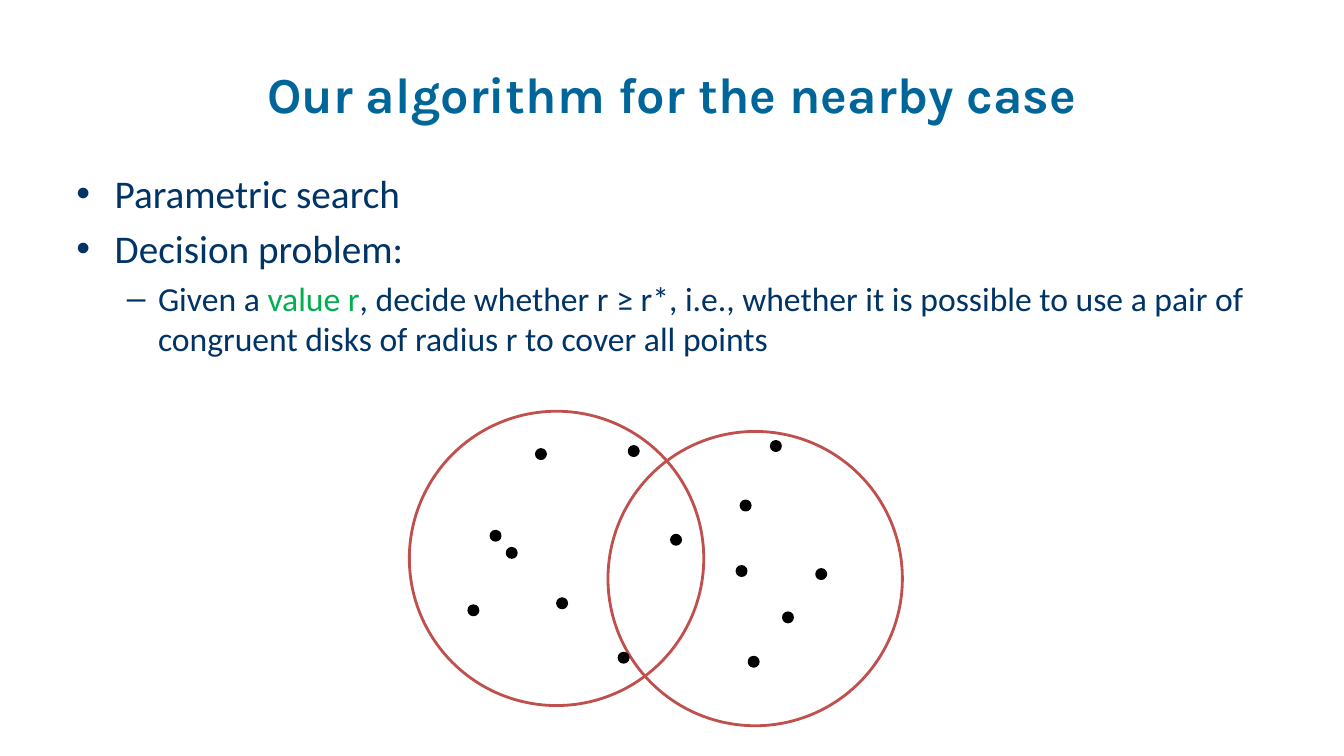
"""Build a slide on the nearby case of a two-disk cover problem."""
from typing import NamedTuple

from lxml import etree
from pptx import Presentation
from pptx import util as u
from pptx.dml import color as clr
from pptx.enum import shapes, text
from pptx.oxml import ns

NAVY, GREEN, RED, BLACK = "003366", "00B050", "C0504D", "000000"
DISK, DOT = 2.92, 0.09


class Spot(NamedTuple):
    left: float
    top: float


class Item(NamedTuple):
    words: tuple[tuple[str, str], ...]
    size: int
    level: int
    mark: str
    left: float
    hang: float


DISKS = [Spot(6.03, 4.28), Spot(4.06, 4.08)]
DOTS = [
    Spot(4.87, 5.27), Spot(5.03, 5.44), Spot(7.65, 4.38), Spot(7.43, 6.52),
    Spot(5.53, 5.94), Spot(6.24, 4.43), Spot(4.65, 6.01), Spot(6.14, 6.48),
    Spot(7.77, 6.08), Spot(5.32, 4.46), Spot(6.66, 5.31), Spot(8.1, 5.65),
    Spot(7.31, 5.62), Spot(7.35, 4.97),
]
ITEMS = [
    Item((("Parametric search", NAVY),), 28, 0, "•", 0.38, 0.38),
    Item((("Decision problem:", NAVY),), 28, 0, "•", 0.38, 0.38),
    Item((("Given a ", NAVY), ("value r", GREEN),
          (", decide whether r ≥ r*, i.e., whether it is possible to use a pair of "
           "congruent disks of radius r to cover all points", NAVY)),
         24, 1, "–", 0.81, 0.31),
]


def paint(code: str) -> clr.RGBColor:
    return clr.RGBColor.from_string(code)


def style(run, face: str, size: int, tint: str) -> None:
    run.font.name = face
    run.font.size = u.Pt(size)
    run.font.color.rgb = paint(tint)


def place(shape, left: float, top: float, width: float, height: float) -> None:
    shape.left, shape.top = u.Inches(left), u.Inches(top)
    shape.width, shape.height = u.Inches(width), u.Inches(height)


def add_title(slide) -> None:
    title = slide.shapes.title
    place(title, 0.67, 0.3, 12, 1.25)
    frame = title.text_frame
    frame.text = "Our algorithm for the nearby case"
    frame.auto_size = text.MSO_AUTO_SIZE.NONE
    frame.vertical_anchor = text.MSO_ANCHOR.MIDDLE
    para = frame.paragraphs[0]
    para.alignment = text.PP_ALIGN.CENTER
    run = para.runs[0]
    style(run, "Karla", 36, "006699")
    run.font.bold = True
    run._r.get_or_add_rPr().set("spc", "10")


def add_item(para, item: Item) -> None:
    para.level = item.level
    para.space_before = u.Pt(item.size * 0.2)
    props = para._p.get_or_add_pPr()
    props.set("marL", str(u.Inches(item.left)))
    props.set("indent", str(-u.Inches(item.hang)))
    font = etree.SubElement(props, ns.qn("a:buFont"))
    font.set("typeface", "Arial")
    mark = etree.SubElement(props, ns.qn("a:buChar"))
    mark.set("char", item.mark)
    for words, tint in item.words:
        run = para.add_run()
        run.text = words
        style(run, "Calibri", item.size, tint)


def add_body(slide) -> None:
    box = slide.shapes.add_textbox(
        u.Inches(0.66), u.Inches(1.63), u.Inches(12), u.Inches(4.95))
    frame = box.text_frame
    frame.word_wrap = True
    for order, item in enumerate(ITEMS):
        add_item(frame.add_paragraph() if order else frame.paragraphs[0], item)


def add_round(slide, spot: Spot, size: float, line: str, fill: str = "") -> None:
    shape = slide.shapes.add_shape(
        shapes.MSO_SHAPE.OVAL, u.Inches(spot.left), u.Inches(spot.top),
        u.Inches(size), u.Inches(size))
    shape.shadow.inherit = False
    shape.line.color.rgb = paint(line)
    shape.line.width = u.Pt(2)
    if fill:
        shape.fill.solid()
        shape.fill.fore_color.rgb = paint(fill)
    else:
        shape.fill.background()


def main() -> None:
    deck = Presentation()
    deck.slide_width, deck.slide_height = u.Inches(13.33), u.Inches(7.5)
    slide = deck.slides.add_slide(deck.slide_layouts.get_by_name("Title Only"))
    add_title(slide)
    add_body(slide)
    add_round(slide, DISKS[0], DISK, RED)
    for spot in DOTS:
        add_round(slide, spot, DOT, BLACK, BLACK)
    add_round(slide, DISKS[1], DISK, RED)
    deck.save("out.pptx")


if __name__ == "__main__":
    main()
